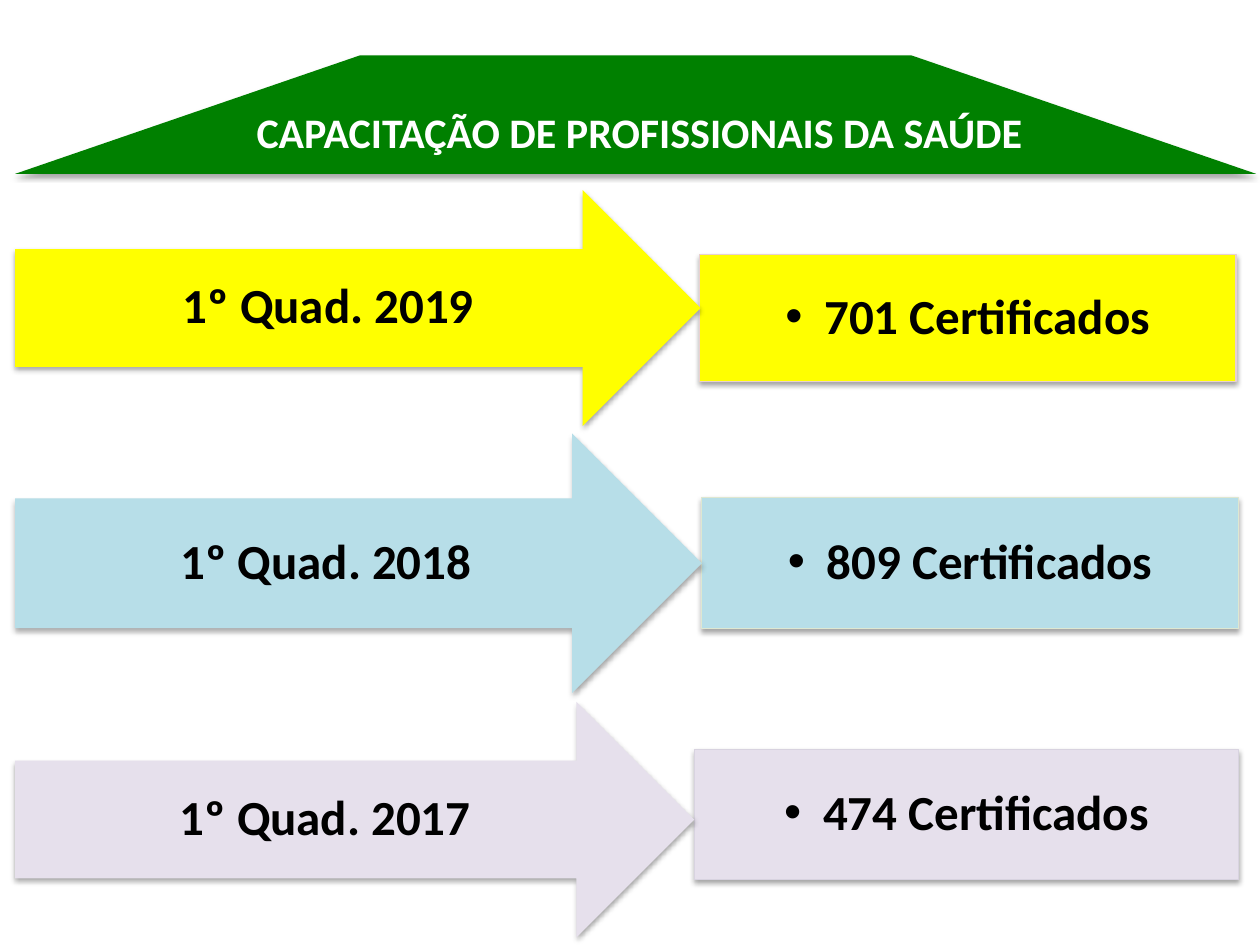
from lxml import etree
from pptx import Presentation
from pptx.dml.color import RGBColor
from pptx.enum.shapes import MSO_SHAPE as Shape
from pptx.enum.text import MSO_ANCHOR as Anchor, MSO_AUTO_SIZE as AutoSize, PP_ALIGN as Align
from pptx.oxml.ns import qn
from pptx.util import Emu, Inches, Pt

BLACK = RGBColor(0x00, 0x00, 0x00)
WHITE = RGBColor(0xFF, 0xFF, 0xFF)
GREEN = RGBColor(0x00, 0x80, 0x00)
YELLOW = RGBColor(0xFF, 0xFF, 0x00)
BLUE = RGBColor(0xB7, 0xDE, 0xE8)
LILAC = RGBColor(0xE6, 0xE0, 0xEC)
PINK_EDGE = RGBColor(0xE8, 0xD0, 0xD0)
GREEN_EDGE = RGBColor(0xDE, 0xE7, 0xD1)
LILAC_EDGE = RGBColor(0xD8, 0xD3, 0xE0)

LEFT = 0.12
# period, result, fill, edge, box kind, arrow (top, width, height), box (left, top, width, height)
ROWS = [
    ("1º Quad. 2019", "701 Certificados", YELLOW, PINK_EDGE, Shape.FLOWCHART_PROCESS,
     (1.51, 5.44, 1.87), (5.55, 2.02, 4.26, 1.01)),
    ("1º Quad. 2018", "809 Certificados", BLUE, GREEN_EDGE, Shape.FLOWCHART_PROCESS,
     (3.44, 5.45, 2.06), (5.57, 3.95, 4.26, 1.04)),
    ("1º Quad. 2017", "474 Certificados", LILAC, LILAC_EDGE, Shape.RECTANGLE,
     (5.57, 5.39, 1.87), (5.51, 5.95, 4.32, 1.03)),
]


def add_shadow(shape):
    """Soft shadow falling straight down."""
    shape.shadow.inherit = False
    effects = shape._element.spPr.find(qn("a:effectLst"))
    outer = etree.SubElement(effects, qn("a:outerShdw"), blurRad=str(Pt(3.1)),
                             dist=str(Pt(1.8)), dir="5400000", rotWithShape="0")
    color = etree.SubElement(outer, qn("a:srgbClr"), val="000000")
    etree.SubElement(color, qn("a:alpha"), val="35000")


def add_block(slide, kind, bounds, fill, edge=None):
    block = slide.shapes.add_shape(kind, *map(Inches, bounds))
    block.fill.solid()
    block.fill.fore_color.rgb = fill
    if edge is None:
        block.line.fill.background()
    else:
        block.line.color.rgb = edge
        block.line.width = Pt(0.75)
    add_shadow(block)
    return block


def write_text(shape, text, size=28, color=BLACK, margins=(0.12, 0.06), bullet=False, wrap=True):
    frame = shape.text_frame
    frame.word_wrap = wrap
    frame.auto_size = AutoSize.NONE
    frame.vertical_anchor = Anchor.MIDDLE
    frame.margin_left = frame.margin_right = Inches(margins[0])
    frame.margin_top = frame.margin_bottom = Inches(margins[1])
    para = frame.paragraphs[0]
    para.alignment = Align.CENTER
    para.line_spacing = 0.9
    if bullet:
        add_bullet(para)
    span = para.add_run()
    span.text = text
    span.font.name = "Calibri"
    span.font.size = Pt(size)
    span.font.bold = True
    span.font.color.rgb = color


def add_bullet(para, indent=0.31):
    props = para._p.get_or_add_pPr()
    props.set("marL", str(Inches(indent)))
    props.set("indent", str(-Inches(indent)))
    etree.SubElement(props, qn("a:buFont"), typeface="Arial")
    etree.SubElement(props, qn("a:buChar"), char="•")


def add_row(slide, period, result, fill, edge, box_kind, arrow_bounds, box_bounds):
    box = add_block(slide, box_kind, box_bounds, fill, edge)
    write_text(box, result, margins=(0.02, 0.02), bullet=True)
    arrow = add_block(slide, Shape.RIGHT_ARROW, (LEFT, *arrow_bounds), fill)
    write_text(arrow, period)


def add_heading(slide, text):
    roof = add_block(slide, Shape.TRAPEZOID, (LEFT, 0.44, 9.85, 0.94), GREEN)
    roof.adjustments[0] = 2.91
    title = slide.shapes.title
    title.left, title.top, title.width, title.height = map(Inches, (1.91, 0.84, 6.33, 0.46))
    write_text(title, text, size=24, color=WHITE, margins=(0.1, 0.05), wrap=False)
    # Bring the title in front of the roof
    roof._element.addnext(title._element)


def main():
    deck = Presentation()
    deck.slide_width, deck.slide_height = Inches(10), Inches(7.5)
    page = deck.slides.add_slide(deck.slide_layouts[5])
    for row in ROWS:
        add_row(page, *row)
    add_heading(page, "CAPACITAÇÃO DE PROFISSIONAIS DA SAÚDE")
    deck.save("out.pptx")


if __name__ == "__main__":
    main()
